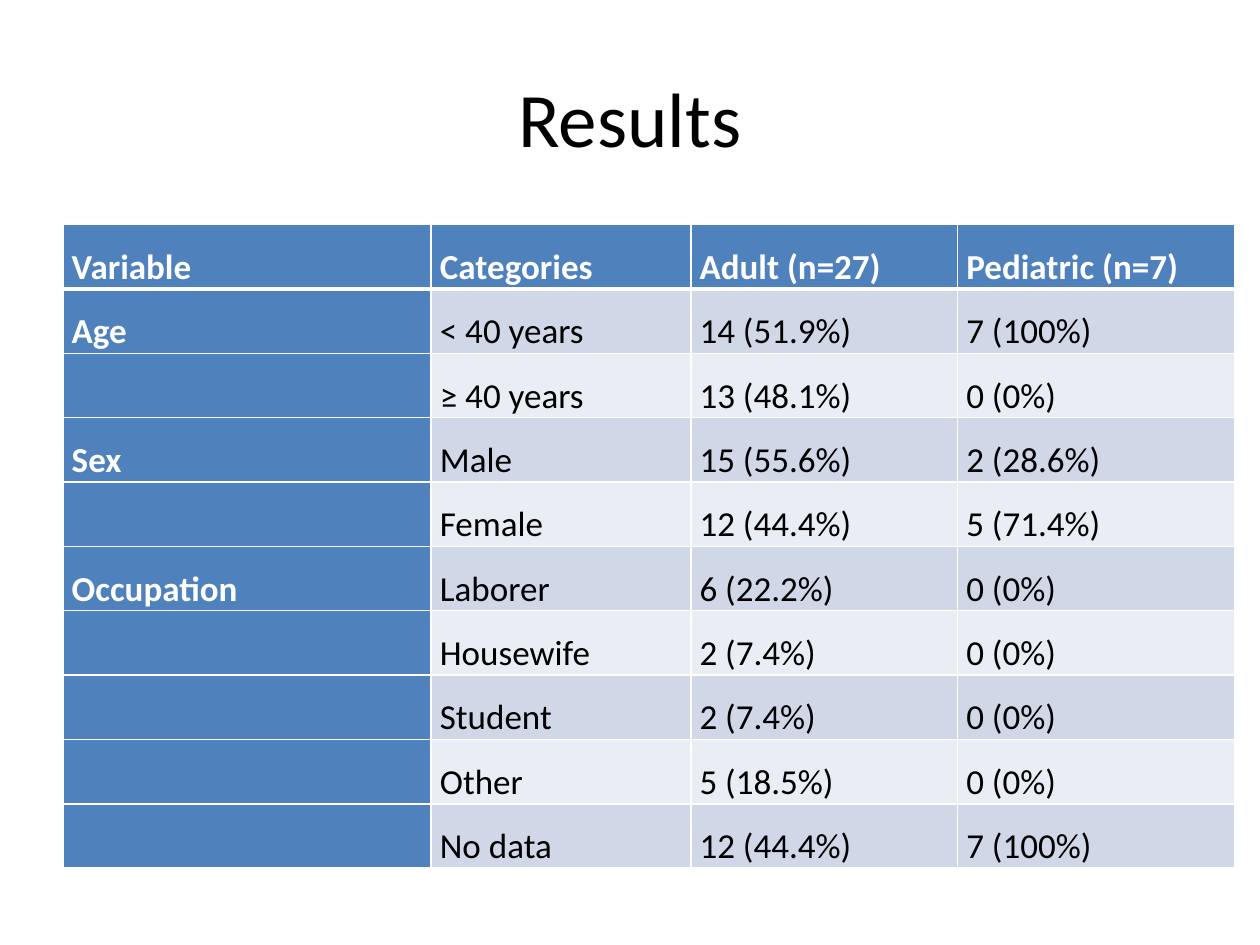
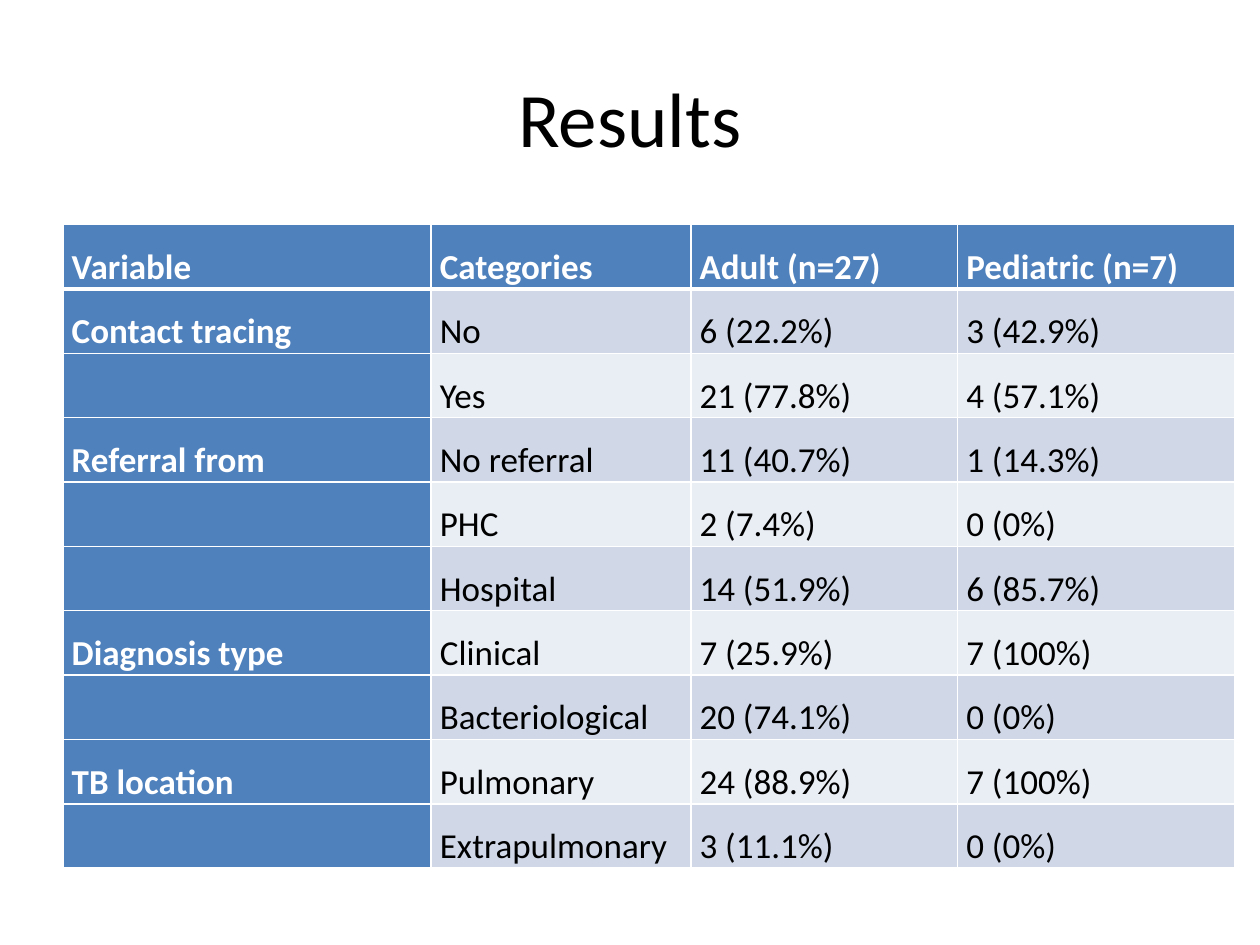
from lxml.etree import SubElement
from pptx import Presentation
from pptx.dml.color import RGBColor
from pptx.enum.text import MSO_ANCHOR, PP_ALIGN
from pptx.oxml.ns import qn
from pptx.util import Pt

HUES = {"white": "FFFFFF", "black": "000000", "blue": "4F81BD",
        "odd": "D0D8E8", "even": "E9EDF4"}
FONT = "Calibri"
HEAD = ("Variable", "Categories", "Adult (n=27)", "Pediatric (n=7)")
WIDTHS = (210.4, 148.4, 152.4, 158.4)
ROW = 36.3

# One list per slide: each variable with its categories and counts
SLIDES = [
    [
        ("Age", [("< 40 years", "14 (51.9%)", "7 (100%)"),
                 ("≥ 40 years", "13 (48.1%)", "0 (0%)")]),
        ("Sex", [("Male", "15 (55.6%)", "2 (28.6%)"),
                 ("Female", "12 (44.4%)", "5 (71.4%)")]),
        ("Occupation", [("Laborer", "6 (22.2%)", "0 (0%)"),
                        ("Housewife", "2 (7.4%)", "0 (0%)"),
                        ("Student", "2 (7.4%)", "0 (0%)"),
                        ("Other", "5 (18.5%)", "0 (0%)"),
                        ("No data", "12 (44.4%)", "7 (100%)")]),
    ],
    [
        ("Contact tracing", [("No", "6 (22.2%)", "3 (42.9%)"),
                             ("Yes", "21 (77.8%)", "4 (57.1%)")]),
        ("Referral from", [("No referral", "11 (40.7%)", "1 (14.3%)"),
                           ("PHC", "2 (7.4%)", "0 (0%)"),
                           ("Hospital", "14 (51.9%)", "6 (85.7%)")]),
        ("Diagnosis type", [("Clinical", "7 (25.9%)", "7 (100%)"),
                            ("Bacteriological", "20 (74.1%)", "0 (0%)")]),
        ("TB location", [("Pulmonary", "24 (88.9%)", "7 (100%)"),
                         ("Extrapulmonary", "3 (11.1%)", "0 (0%)")]),
    ],
]


def write(frame, text, size=20, hue="black", bold=False,
          align=PP_ALIGN.JUSTIFY, lines=1.5):
    para = frame.paragraphs[0]
    para.alignment = align
    para.line_spacing = lines
    if text:
        run = para.add_run()
        run.text = text
        run.font.name = FONT
        run.font.size = Pt(size)
        run.font.bold = bold
        run.font.color.rgb = RGBColor.from_string(HUES[hue])


def edge(cell, top, bottom):
    """Draw white borders; the widths of top and bottom are in points."""
    props = cell._tc.get_or_add_tcPr()
    for side, width in (("L", 1), ("R", 1), ("T", top), ("B", bottom)):
        line = SubElement(props, qn(f"a:ln{side}"), w=str(Pt(width)))
        fill = SubElement(line, qn("a:solidFill"))
        SubElement(fill, qn("a:srgbClr"), val=HUES["white"])


deck = Presentation()
deck.slide_width, deck.slide_height = Pt(720), Pt(540)

for groups in SLIDES:
    slide = deck.slides.add_slide(deck.slide_layouts[5])
    title = slide.shapes.title
    title.left, title.top, title.width, title.height = Pt(36), Pt(21.6), Pt(648), Pt(90)
    title.text_frame.vertical_anchor = MSO_ANCHOR.MIDDLE
    write(title.text_frame, "Results", size=44, align=PP_ALIGN.CENTER, lines=1)

    rows = [HEAD]
    for name, items in groups:
        rows += [(name if i == 0 else "", *item) for i, item in enumerate(items)]

    table = slide.shapes.add_table(len(rows), len(HEAD), Pt(36), Pt(128.4),
                                   Pt(sum(WIDTHS)), Pt(ROW * len(rows))).table
    table.first_col = True
    for column, width in zip(table.columns, WIDTHS):
        column.width = Pt(width)

    for r, values in enumerate(rows):
        table.rows[r].height = Pt(ROW)
        for c, text in enumerate(values):
            cell = table.cell(r, c)
            label = r == 0 or c == 0
            cell.margin_left = cell.margin_right = Pt(5)
            cell.margin_top = cell.margin_bottom = 0
            edge(cell, top=3 if r == 1 else 1, bottom=3 if r == 0 else 1)
            shade = "blue" if label else "odd" if r % 2 else "even"
            cell.fill.solid()
            cell.fill.fore_color.rgb = RGBColor.from_string(HUES[shade])
            write(cell.text_frame, text, hue="white" if label else "black", bold=label)

deck.save("out.pptx")
